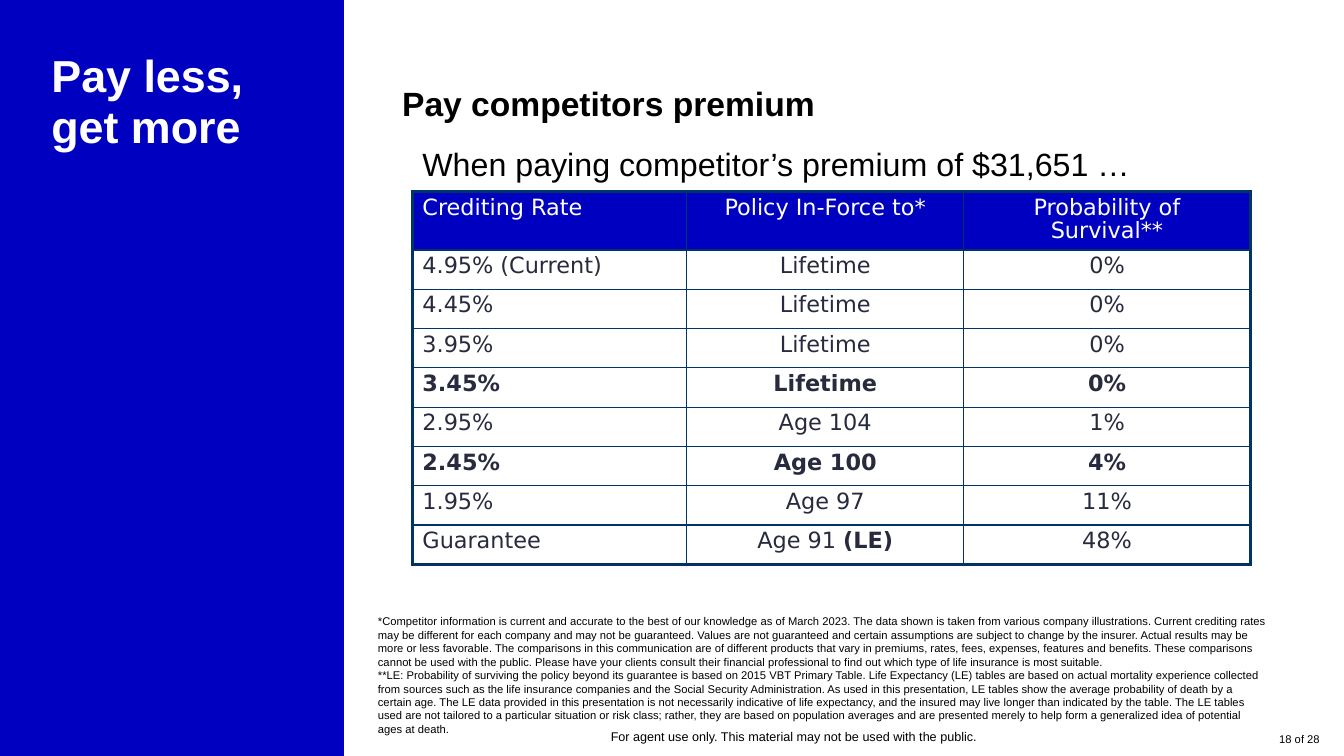
from dataclasses import dataclass

from lxml.etree import SubElement
from pptx import Presentation
from pptx.dml.color import RGBColor
from pptx.enum.shapes import MSO_SHAPE as Preset
from pptx.enum.text import MSO_ANCHOR as Anchor, PP_ALIGN as Align
from pptx.oxml.ns import qn
from pptx.util import Inches, Pt


@dataclass(frozen=True)
class Theme:
    blue: str = "0000C1"
    navy: str = "003366"
    slate: str = "282B3E"
    white: str = "FFFFFF"
    black: str = "000000"
    font: str = "Arial"
    table_font: str = "DejaVu Sans"
    title: float = 32
    heading: float = 24
    lead: float = 23
    table: float = 16
    footer: float = 9
    note: float = 8
    outer_line: float = 2.25
    inner_line: float = 1


THEME = Theme()

RATE_ROWS = [
    ["Crediting Rate", "Policy In-Force to*", "Probability of Survival**"],
    ["4.95% (Current)", "Lifetime", "0%"],
    ["4.45%", "Lifetime", "0%"],
    ["3.95%", "Lifetime", "0%"],
    ["3.45%", "Lifetime", "0%"],
    ["2.95%", "Age 104", "1%"],
    ["2.45%", "Age 100", "4%"],
    ["1.95%", "Age 97", "11%"],
    ["Guarantee", "Age 91 ", "48%"],
]
BOLD_RATES = {"3.45%", "2.45%"}
COLUMN_WIDTHS = [2.72, 2.75, 2.84]
HEADER_HEIGHT, ROW_HEIGHT = 0.56, 0.39

FOOTNOTES = [
    "*Competitor information is current and accurate to the best of our knowledge as of March 2023. "
    "The data shown is taken from various company illustrations. Current crediting rates may be "
    "different for each company and may not be guaranteed. Values are not guaranteed and certain "
    "assumptions are subject to change by the insurer. Actual results may be more or less favorable. "
    "The comparisons in this communication are of different products that vary in premiums, rates, "
    "fees, expenses, features and benefits. These comparisons cannot be used with the public. Please "
    "have your clients consult their financial professional to find out which type of life insurance "
    "is most suitable.",
    "**LE: Probability of surviving the policy beyond its guarantee is based on 2015 VBT Primary "
    "Table. Life Expectancy (LE) tables are based on actual mortality experience collected from "
    "sources such as the life insurance companies and the Social Security Administration. As used in "
    "this presentation, LE tables show the average probability of death by a certain age. The LE data "
    "provided in this presentation is not necessarily indicative of life expectancy, and the insured "
    "may live longer than indicated by the table. The LE tables used are not tailored to a particular "
    "situation or risk class; rather, they are based on population averages and are presented merely "
    "to help form a generalized idea of potential ages at death.",
]


def style_font(font, size, color, bold=False, name=THEME.font):
    font.name, font.size, font.bold = name, Pt(size), bold
    font.color.rgb = RGBColor.from_string(color)


def add_text(slide, box, text, size, color=THEME.black, bold=False,
             align=Align.LEFT, anchor=Anchor.TOP, inset=True, spacing=None):
    frame = slide.shapes.add_textbox(*map(Inches, box)).text_frame
    frame.word_wrap = True
    frame.vertical_anchor = anchor
    if not inset:
        frame.margin_left = frame.margin_right = 0
        frame.margin_top = frame.margin_bottom = 0
    frame.text = text
    for paragraph in frame.paragraphs:
        paragraph.alignment = align
        paragraph.line_spacing = spacing
        style_font(paragraph.font, size, color, bold)


def add_side_panel(slide):
    panel = slide.shapes.add_shape(
        Preset.RECTANGLE, 0, 0, Inches(3.41), Inches(7.5))
    panel.shadow.inherit = False
    panel.fill.solid()
    panel.fill.fore_color.rgb = RGBColor.from_string(THEME.blue)
    panel.line.fill.background()


def set_borders(cell, outer_edges):
    properties = cell._tc.get_or_add_tcPr()
    for edge in "LRTB":
        width = THEME.outer_line if edge in outer_edges else THEME.inner_line
        line = SubElement(properties, qn(f"a:ln{edge}"), w=str(Pt(width)))
        fill = SubElement(line, qn("a:solidFill"))
        SubElement(fill, qn("a:srgbClr"), val=THEME.navy)


def fill_cell(cell, text, centered, header, bold):
    if header:
        cell.fill.solid()
        cell.fill.fore_color.rgb = RGBColor.from_string(THEME.blue)
    else:
        cell.fill.background()
    cell.text_frame.text = text
    paragraph = cell.text_frame.paragraphs[0]
    paragraph.alignment = Align.CENTER if centered else Align.LEFT
    paragraph.line_spacing = 0.9
    style_font(paragraph.runs[0].font, THEME.table,
               THEME.white if header else THEME.slate, bold, THEME.table_font)


def add_rate_table(slide):
    heights = [HEADER_HEIGHT] + [ROW_HEIGHT] * (len(RATE_ROWS) - 1)
    last_row, last_column = len(heights) - 1, len(COLUMN_WIDTHS) - 1
    table = slide.shapes.add_table(
        len(heights), len(COLUMN_WIDTHS), Inches(4.09), Inches(1.9),
        Inches(sum(COLUMN_WIDTHS)), Inches(sum(heights))).table
    table.first_row = table.horz_banding = False
    for column, width in zip(table.columns, COLUMN_WIDTHS):
        column.width = Inches(width)
    for row, height in zip(table.rows, heights):
        row.height = Inches(height)

    for r, values in enumerate(RATE_ROWS):
        for c, text in enumerate(values):
            cell = table.cell(r, c)
            sides = {"L": c == 0, "R": c == last_column,
                     "T": r == 0, "B": r == last_row}
            set_borders(cell, {edge for edge, outer in sides.items() if outer})
            fill_cell(cell, text, c > 0, r == 0, values[0] in BOLD_RATES)

    # Life expectancy mark beside the guaranteed age
    expectancy = table.cell(last_row, 1).text_frame.paragraphs[0].add_run()
    expectancy.text = "(LE)"
    style_font(expectancy.font, THEME.table, THEME.slate, True, THEME.table_font)


def main():
    deck = Presentation()
    deck.slide_width, deck.slide_height = Inches(13.33), Inches(7.5)
    slide = deck.slides.add_slide(deck.slide_layouts[6])

    # Side panel with the title
    add_side_panel(slide)
    add_text(slide, (0.51, 0.51, 2.65, 3.72), "Pay less, get more", THEME.title,
             THEME.white, bold=True, inset=False, spacing=0.95)

    # Heading, lead-in and table
    add_text(slide, (3.89, 0.77, 7.2, 0.5), "Pay competitors premium",
             THEME.heading, bold=True)
    add_text(slide, (4.09, 1.38, 8.59, 0.48),
             "When paying competitor’s premium of $31,651 …", THEME.lead)
    add_rate_table(slide)

    # Footnotes, footer and page number
    add_text(slide, (3.65, 6.05, 9.03, 1.4), "\n".join(FOOTNOTES), THEME.note)
    add_text(slide, (5.96, 7.18, 6.5, 0.25),
             "For agent use only. This material may not be used with the public.",
             THEME.footer)
    add_text(slide, (12.61, 7.21, 0.48, 0.19), "18 of 28", THEME.note,
             align=Align.RIGHT, anchor=Anchor.BOTTOM, inset=False)

    deck.save("out.pptx")


if __name__ == "__main__":
    main()
